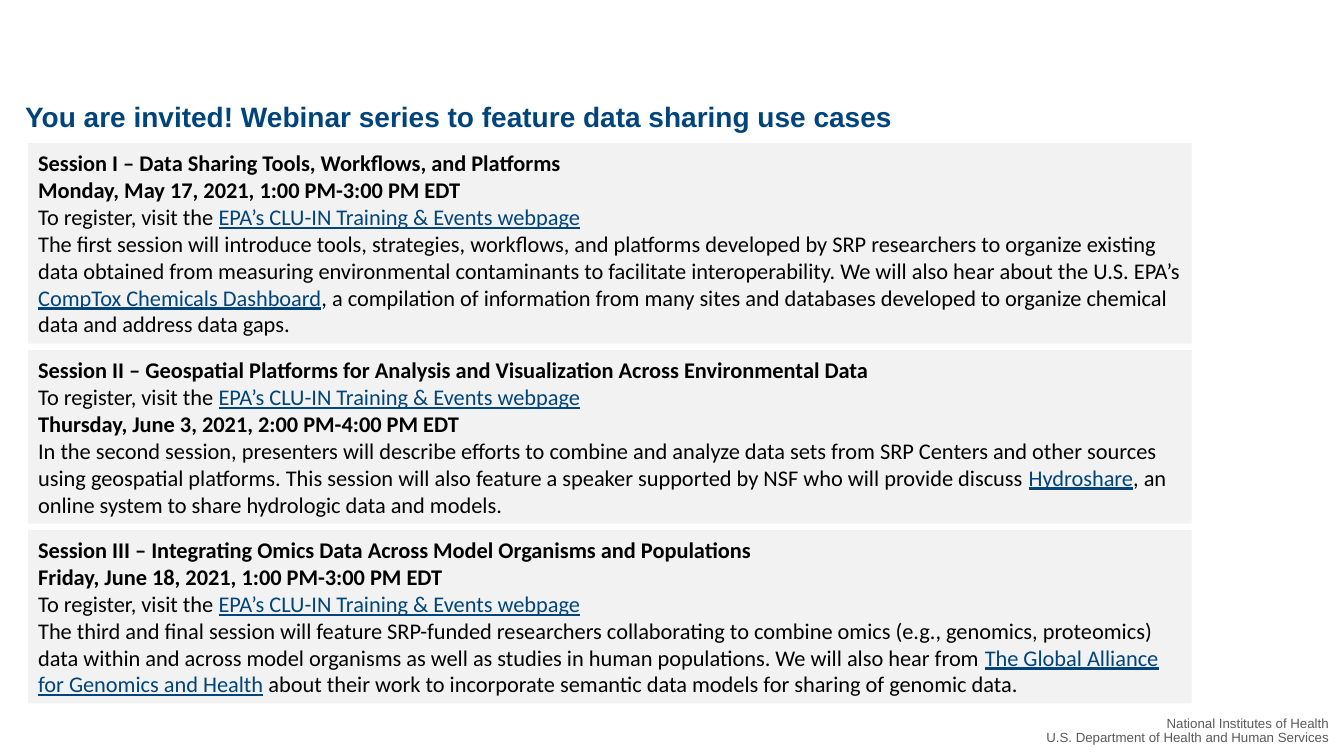
import pptx
import pptx.util
import pptx.dml.color
import pptx.enum.shapes
import pptx.enum.text

COLOURS = {"navy": "00447C", "panel": "F2F2F2", "ink": "000000", "grey": "595959"}
ANCHOR = pptx.enum.text.MSO_ANCHOR
ALIGN = pptx.enum.text.PP_ALIGN
AUTO_SIZE = pptx.enum.text.MSO_AUTO_SIZE

# Panel layout, in percent of the slide's height
FIRST_PANEL_TOP, LINE, PADDING, PANEL_GAP = 18.93, 3.6, 1.33, 0.87

REGISTER = [("plain", "To register, visit the "),
            ("link", "EPA’s CLU-IN Training & Events webpage")]

# Each session: number of text lines, then paragraphs of (style, text) pieces
SESSIONS = [
    (7, [
        [("bold", "Session I – Data Sharing Tools, Workflows, and Platforms")],
        [("bold", "Monday, May 17, 2021, 1:00 PM-3:00 PM EDT")],
        REGISTER,
        [("plain", "The first session will introduce tools, strategies, workflows, and "
                   "platforms developed by SRP researchers to organize existing data "
                   "obtained from measuring environmental contaminants to facilitate "
                   "interoperability. We will also hear about the U.S. EPA’s "),
         ("link", "CompTox Chemicals Dashboard"),
         ("plain", ", a compilation of information from many sites and databases "
                   "developed to organize chemical data and address data gaps.")],
    ]),
    (6, [
        [("bold", "Session II – Geospatial Platforms for Analysis and Visualization "
                  "Across Environmental Data")],
        REGISTER,
        [("bold", "Thursday, June 3, 2021, 2:00 PM-4:00 PM EDT")],
        [("plain", "In the second session, presenters will describe efforts to combine "
                   "and analyze data sets from SRP Centers and other sources using "
                   "geospatial platforms. This session will also feature a speaker "
                   "supported by NSF who will provide discuss "),
         ("link", "Hydroshare"),
         ("plain", ", an online system to share hydrologic data and models.")],
    ]),
    (6, [
        [("bold", "Session III – Integrating Omics Data Across Model Organisms and "
                  "Populations")],
        [("bold", "Friday, June 18, 2021, 1:00 PM-3:00 PM EDT")],
        REGISTER,
        [("plain", "The third and final session will feature SRP-funded researchers "
                   "collaborating to combine omics (e.g., genomics, proteomics) data "
                   "within and across model organisms as well as studies in human "
                   "populations. We will also hear from "),
         ("link", "The Global Alliance for Genomics and Health"),
         ("plain", " about their work to incorporate semantic data models for sharing "
                   "of genomic data.")],
    ]),
]


class InvitationSlide:
    def __init__(self, deck):
        self.deck = deck
        self.slide = deck.slides.add_slide(deck.slide_layouts[6])

    def box(self, left, top, width, height):
        """Turn percentages of the slide's size into lengths."""
        across, down = self.deck.slide_width, self.deck.slide_height
        return [pptx.util.Emu(round(share * full / 100)) for share, full in
                ((left, across), (top, down), (width, across), (height, down))]

    def colour(self, name):
        return pptx.dml.color.RGBColor.from_string(COLOURS[name])

    def style(self, font, face, size, colour, bold=False, underline=False):
        font.name, font.size = face, pptx.util.Pt(size)
        font.bold, font.underline = bold, underline
        font.color.rgb = self.colour(colour)

    def label(self, text, place, size, colour, bold=False):
        """Add unwrapped text and return its frame."""
        frame = self.slide.shapes.add_textbox(*self.box(*place)).text_frame
        frame.text = text
        frame.word_wrap = False
        frame.auto_size = AUTO_SIZE.SHAPE_TO_FIT_TEXT
        for paragraph in frame.paragraphs:
            for run in paragraph.runs:
                self.style(run.font, "Arial", size, colour, bold)
        return frame

    def footer(self, text, place):
        frame = self.label(text, place, 9.5, "grey")
        frame.vertical_anchor = ANCHOR.BOTTOM
        frame.margin_right = pptx.util.Inches(0.15)
        frame.margin_bottom = pptx.util.Inches(0.1)
        for line in frame.paragraphs:
            line.alignment = ALIGN.RIGHT
            line.line_spacing = 0.9

    def panel(self, paragraphs, place):
        panel = self.slide.shapes.add_shape(
            pptx.enum.shapes.MSO_SHAPE.RECTANGLE, *self.box(*place))
        panel.shadow.inherit = False
        panel.fill.solid()
        panel.fill.fore_color.rgb = self.colour("panel")
        panel.line.fill.background()
        frame = panel.text_frame
        frame.word_wrap = True
        frame.auto_size = AUTO_SIZE.SHAPE_TO_FIT_TEXT
        frame.vertical_anchor = ANCHOR.MIDDLE
        for index, pieces in enumerate(paragraphs):
            paragraph = frame.add_paragraph() if index else frame.paragraphs[0]
            paragraph.alignment = ALIGN.LEFT
            for kind, text in pieces:
                run = paragraph.add_run()
                run.text = text
                self.style(run.font, "Calibri", 16,
                           "navy" if kind == "link" else "ink",
                           bold=kind == "bold", underline=kind == "link")


def main():
    deck = pptx.Presentation()
    deck.slide_width = pptx.util.Inches(13.33)
    deck.slide_height = pptx.util.Inches(7.5)
    invitation = InvitationSlide(deck)

    invitation.footer("National Institutes of Health\n"
                      "U.S. Department of Health and Human Services",
                      (76.89, 94.13, 23.11, 5.87))
    top = FIRST_PANEL_TOP
    for lines, paragraphs in SESSIONS:
        height = lines * LINE + PADDING
        invitation.panel(paragraphs, (2.1, top, 86.57, height))
        top += height + PANEL_GAP
    invitation.label("You are invited! Webinar series to feature data sharing use cases",
                     (1.13, 12.53, 66.47, 5.87), 20, "navy", bold=True)
    deck.save("out.pptx")


if __name__ == "__main__":
    main()
